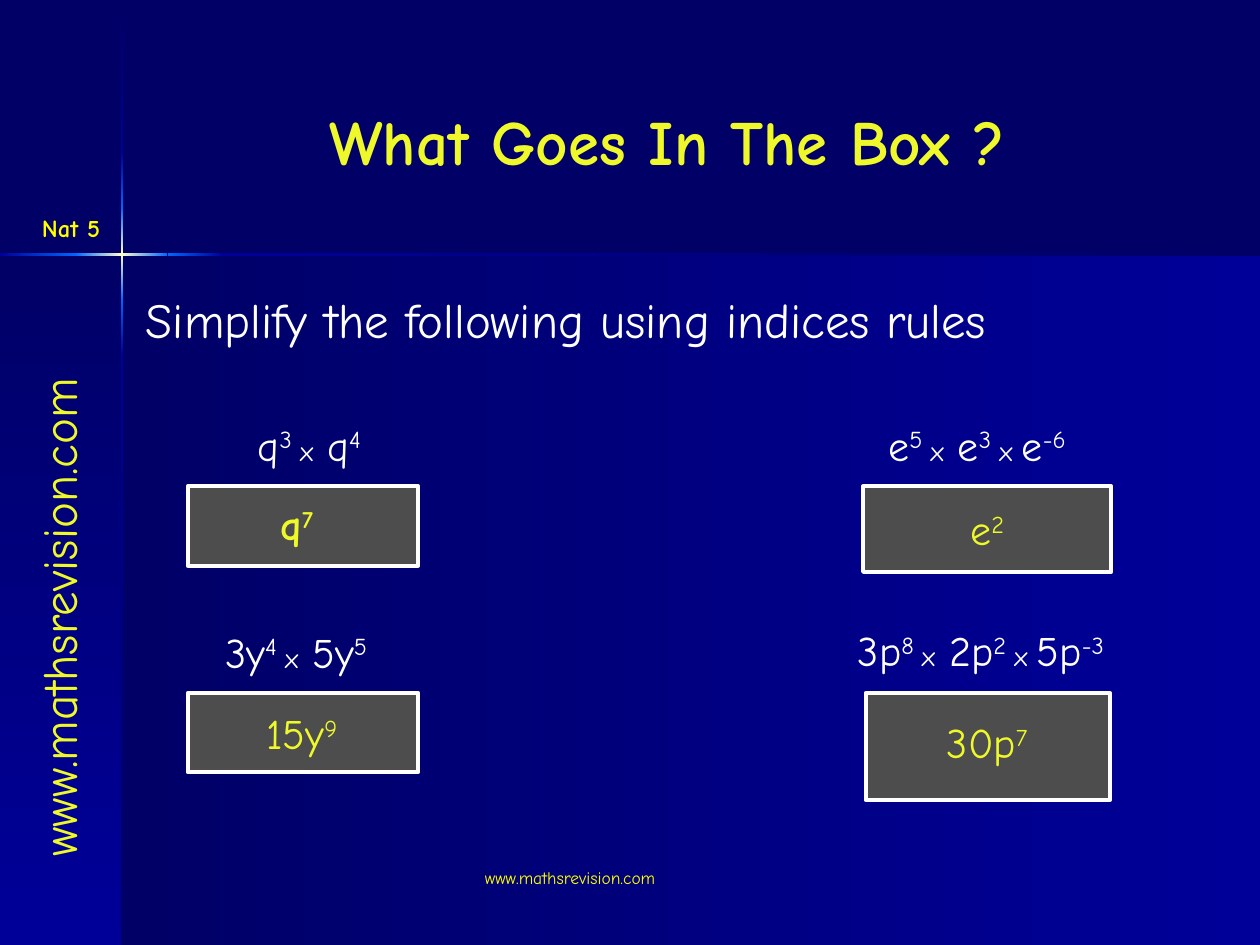
from dataclasses import dataclass
from typing import NamedTuple

from lxml.etree import SubElement
from pptx import Presentation
from pptx.dml.color import RGBColor
from pptx.enum.shapes import MSO_SHAPE
from pptx.enum.text import MSO_ANCHOR, MSO_AUTO_SIZE, PP_ALIGN
from pptx.oxml.ns import qn
from pptx.util import Inches, Pt

COLUMNS, ROWS = 100, 75
WIDTH, HEIGHT = Inches(10), Inches(7.5)
FONT = "Comic Neue"
WEBSITE = "www.mathsrevision.com"
COLORS = {
    "navy": "000066",
    "blue": "000099",
    "bright": "0066FF",
    "glow": "FFFFCC",
    "lemon": "EEF82A",
    "yellow": "FFFF00",
    "white": "FFFFFF",
    "grey": "4D4D4D",
}


class Area(NamedTuple):
    column: float
    row: float
    columns: float
    rows: float


class Span(NamedTuple):
    text: str
    size: float
    raised: bool = False


class Power(NamedTuple):
    base: str
    index: str


@dataclass(frozen=True)
class Band:
    area: Area
    stops: tuple[str, ...]
    angle: int


@dataclass(frozen=True)
class Exercise:
    factors: tuple[Power, ...]
    question_area: Area
    box_area: Area
    answer: Power
    answer_area: Area
    bold: bool = False


FADE_IN = ("navy", "blue")
FADE_OUT = ("blue", "navy")
RISE = ("blue", "bright")
FALL = ("bright", "blue")
FLARE = ("bright", "glow", "bright")
ACROSS, DOWN = 0, 90

BANDS = (
    Band(Area(9.7, 20.2, 90.3, 54.8), FADE_IN, ACROSS),
    Band(Area(0, 20.2, 9.7, 54.8), FADE_IN, DOWN),
    Band(Area(9.6, 0.1, 0.2, 12), FADE_IN, DOWN),
    Band(Area(9.6, 28.2, 0.2, 46.8), FADE_OUT, DOWN),
    Band(Area(17.7, 20.1, 82.3, 0.2), FADE_OUT, ACROSS),
    Band(Area(9.6, 23.8, 0.2, 4.4), FALL, DOWN),
    Band(Area(9.6, 12.1, 0.2, 4.4), RISE, DOWN),
    Band(Area(9.6, 16.5, 0.2, 7.3), FLARE, DOWN),
    Band(Area(0, 20.1, 6.1, 0.2), RISE, ACROSS),
    Band(Area(13.3, 20.1, 4.4, 0.2), FALL, ACROSS),
    Band(Area(6, 20.1, 7.3, 0.2), FLARE, ACROSS),
)

EXERCISES = (
    Exercise(
        (Power("q", "3"), Power("q", "4")), Area(15.5, 32.8, 18.1, 5.1),
        Area(14.9, 38.6, 18.3, 6.3), Power("q", "7"), Area(15.3, 39.1, 16.5, 5.1), True,
    ),
    Exercise(
        (Power("3y", "4"), Power("5y", "5")), Area(14.6, 49.2, 17.8, 5.1),
        Area(14.9, 55, 18.3, 6.3), Power("15y", "9"), Area(16.1, 55.7, 15.7, 5),
    ),
    Exercise(
        (Power("e", "5"), Power("e", "3"), Power("e", "-6")), Area(68.1, 32.8, 18.9, 5.1),
        Area(68.5, 38.6, 19.7, 6.8), Power("e", "2"), Area(70.5, 39.5, 15.7, 5),
    ),
    Exercise(
        (Power("3p", "8"), Power("2p", "2"), Power("5p", "-3")), Area(65, 49.1, 25.7, 5.1),
        Area(68.7, 55, 19.4, 8.5), Power("30p", "7"), Area(70.5, 56.4, 15.7, 5),
    ),
)


def place(area: Area) -> tuple[int, int, int, int]:
    across, down = WIDTH / COLUMNS, HEIGHT / ROWS
    return (
        round(area.column * across),
        round(area.row * down),
        round(area.columns * across),
        round(area.rows * down),
    )


def color(name: str) -> RGBColor:
    return RGBColor.from_string(COLORS[name])


def apply(target, formats: dict) -> None:
    for name, value in formats.items():
        setattr(target, name, value)


def add_rectangle(page, area: Area):
    box = page.shapes.add_shape(MSO_SHAPE.RECTANGLE, *place(area))
    box.shadow.inherit = False
    return box


def draw_band(page, band: Band) -> None:
    box = add_rectangle(page, band.area)
    box.line.fill.background()
    box.fill.gradient()
    gradient = box.element.spPr.find(qn("a:gradFill"))
    for child in list(gradient):
        gradient.remove(child)
    stops = SubElement(gradient, qn("a:gsLst"))
    for number, name in enumerate(band.stops):
        position = 100000 * number // (len(band.stops) - 1)
        stop = SubElement(stops, qn("a:gs"), pos=str(position))
        SubElement(stop, qn("a:srgbClr"), val=COLORS[name])
    SubElement(gradient, qn("a:lin"), ang=str(band.angle * 60000), scaled="0")


def write(box, spans: list[Span], shade: str, align=PP_ALIGN.LEFT,
          bold: bool = False, anchor=MSO_ANCHOR.TOP) -> None:
    frame = box.text_frame
    apply(frame, {"word_wrap": True, "auto_size": MSO_AUTO_SIZE.NONE, "vertical_anchor": anchor})
    para = frame.paragraphs[0]
    para.alignment = align
    for part in spans:
        span = para.add_run()
        span.text = part.text
        apply(span.font, {"name": FONT, "size": Pt(part.size), "bold": bold})
        span.font.color.rgb = color(shade)
        if part.raised:
            span.font._element.set("baseline", "30000")


def draw_text(page, area: Area, spans: list[Span], shade: str, **formats):
    box = page.shapes.add_textbox(*place(area))
    write(box, spans, shade, **formats)
    return box


def product(factors: tuple[Power, ...]) -> list[Span]:
    spans = []
    for number, factor in enumerate(factors):
        if number:
            spans.append(Span("x " if number > 1 else "x", 16))
        base = f" {factor.base}" if number == 1 else factor.base
        index = factor.index if factor is factors[-1] else f"{factor.index} "
        spans += [Span(base, 24), Span(index, 24, True)]
    return spans


def draw_exercise(page, exercise: Exercise) -> None:
    box = add_rectangle(page, exercise.box_area)
    box.fill.solid()
    box.fill.fore_color.rgb = color("grey")
    box.line.color.rgb = color("white")
    box.line.width = Pt(2.25)
    centre = PP_ALIGN.CENTER
    draw_text(page, exercise.question_area, product(exercise.factors), "white", align=centre)
    draw_text(page, exercise.answer_area, product((exercise.answer,)), "lemon",
              align=centre, bold=exercise.bold)


def main() -> None:
    deck = Presentation()
    apply(deck, {"slide_width": WIDTH, "slide_height": HEIGHT})
    page = deck.slides.add_slide(deck.slide_layouts[5])
    page.background.fill.solid()
    page.background.fill.fore_color.rgb = color("navy")
    for band in BANDS:
        draw_band(page, band)

    title = page.shapes.title
    apply(title, dict(zip(("left", "top", "width", "height"), place(Area(11.7, 3.3, 82.5, 15.7)))))
    write(title, [Span("What Goes In The Box ?", 36)], "lemon",
          align=PP_ALIGN.CENTER, bold=True, anchor=MSO_ANCHOR.MIDDLE)

    sidebar = draw_text(page, Area(-17.4, 44.1, 44, 5.7), [Span(WEBSITE, 28)], "lemon")
    sidebar.rotation = 270
    draw_text(page, Area(37.5, 68.3, 31.7, 5), [Span(WEBSITE, 10)], "yellow")
    draw_text(page, Area(1.8, 16.4, 7.7, 3.4), [Span("Nat 5", 14)], "yellow",
              align=PP_ALIGN.CENTER, bold=True)
    draw_text(page, Area(10.6, 22.5, 89.4, 5.7),
              [Span("Simplify the following using indices rules", 28)], "white")
    for exercise in EXERCISES:
        draw_exercise(page, exercise)
    deck.save("out.pptx")


if __name__ == "__main__":
    main()
